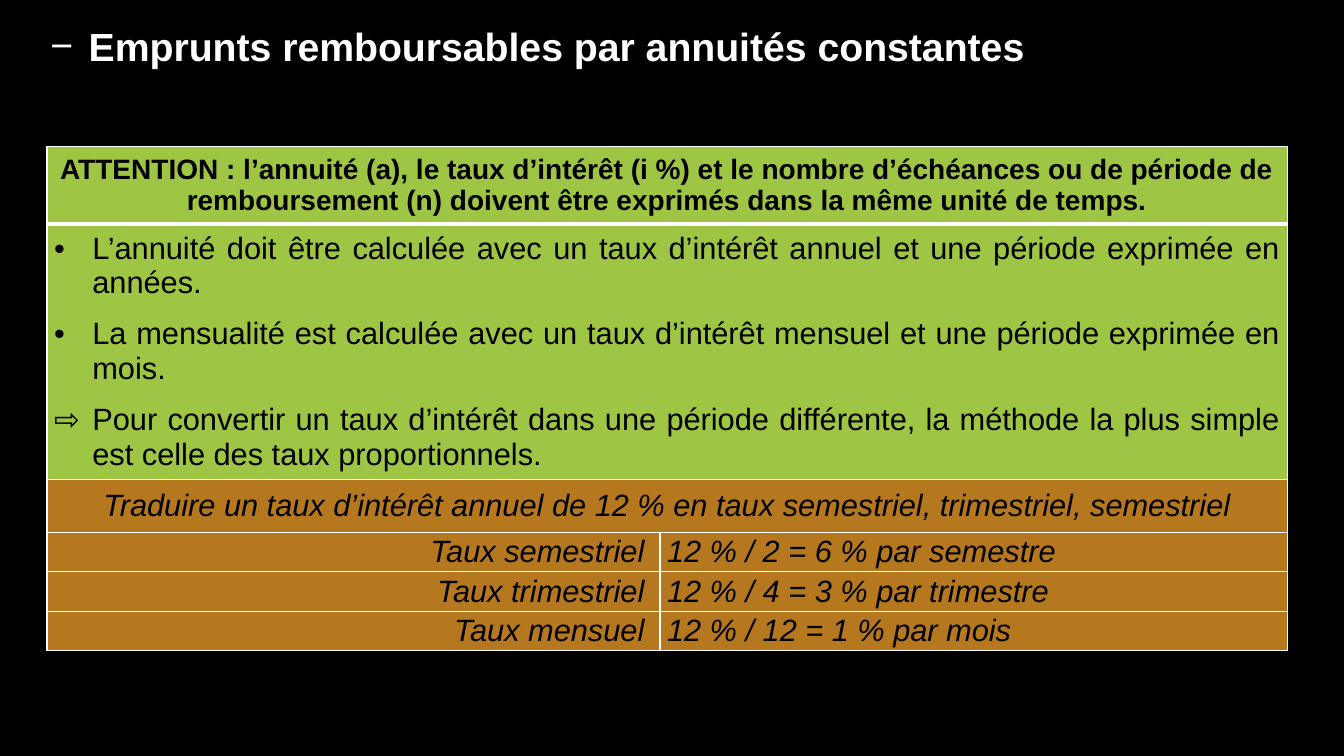
from dataclasses import dataclass

from lxml.etree import SubElement
from pptx import Presentation
from pptx.dml.color import RGBColor as Rgb
from pptx.enum.text import MSO_ANCHOR as Anchor, MSO_AUTO_SIZE as AutoSize, PP_ALIGN as Align
from pptx.oxml.ns import qn
from pptx.util import Inches, Pt


@dataclass(frozen=True)
class Theme:
    font: str = "Arial"
    back: str = "000000"
    light: str = "FFFFFF"
    dark: str = "000000"
    rule: str = "9EC544"
    example: str = "B5781F"
    title: int = 28
    warning: int = 20
    body: int = 22
    hang: float = 0.38
    thin: int = 1
    thick: int = 3


THEME = Theme()
WIDTH, HEIGHT = Inches(13.33), Inches(7.5)

TITLE = "Emprunts remboursables par annuités constantes"
WARNING = (
    "ATTENTION : l’annuité (a), le taux d’intérêt (i %) et le nombre d’échéances "
    "ou de période de remboursement (n) doivent être exprimés dans la même unité de temps."
)
RULES = [
    ("•", "L’annuité doit être calculée avec un taux d’intérêt annuel et une période exprimée en années."),
    ("•", "La mensualité est calculée avec un taux d’intérêt mensuel et une période exprimée en mois."),
    ("⇨", "Pour convertir un taux d’intérêt dans une période différente, la méthode la plus simple "
          "est celle des taux proportionnels."),
]
EXAMPLE = "Traduire un taux d’intérêt annuel de 12 % en taux semestriel, trimestriel, semestriel"
RATES = [
    ("Taux semestriel ", "12 % / 2 = 6 % par semestre"),
    ("Taux trimestriel ", "12 % / 4 = 3 % par trimestre"),
    ("Taux mensuel ", "12 % / 12 = 1 % par mois"),
]
COLUMN_SHARES = [45.61, 46.66]
ROW_SHARES = [10.27, 33.73, 7.07] + [5.2] * len(RATES)


def across(percent):
    return int(WIDTH * percent / 100)


def down(percent):
    return int(HEIGHT * percent / 100)


def write(para, text, size, color=THEME.dark, align=Align.LEFT, gap=(0, 0), bold=False, italic=False):
    para.text = text
    para.alignment = align
    para.space_before, para.space_after = map(Pt, gap)
    for span in para.runs:
        font = span.font
        font.name, font.size = THEME.font, Pt(size)
        font.bold, font.italic = bold, italic
        font.color.rgb = Rgb.from_string(color)


def add_bullet(para, mark):
    props = para._p.get_or_add_pPr()
    hang = Inches(THEME.hang)
    props.set("marL", str(hang))
    props.set("indent", str(-hang))
    SubElement(props, qn("a:buFont"), typeface=THEME.font)
    SubElement(props, qn("a:buChar"), char=mark)


def add_border(cell, side, points):
    line = SubElement(cell._tc.get_or_add_tcPr(), qn(f"a:ln{side}"), w=str(Pt(points)))
    fill = SubElement(line, qn("a:solidFill"))
    SubElement(fill, qn("a:srgbClr"), val=THEME.light)


def style_cell(cell, row):
    cell.vertical_anchor = Anchor.MIDDLE
    cell.margin_left = cell.margin_right = Inches(0.07)
    cell.margin_top = cell.margin_bottom = 0
    thick_sides = {0: "B", 1: "T"}
    for side in "LRTB":
        add_border(cell, side, THEME.thick if side == thick_sides.get(row) else THEME.thin)
    cell.fill.solid()
    cell.fill.fore_color.rgb = Rgb.from_string(THEME.rule if row < 2 else THEME.example)


def add_title(page):
    title = page.shapes.title
    title.left, title.top = across(3), down(2.93)
    title.width, title.height = across(91.07), down(7.6)
    frame = title.text_frame
    frame.word_wrap = True
    frame.auto_size = AutoSize.SHAPE_TO_FIT_TEXT
    frame.vertical_anchor = Anchor.TOP
    para = frame.paragraphs[0]
    write(para, TITLE, THEME.title, THEME.light, Align.JUSTIFY, (6, 0), bold=True)
    para.line_spacing = 0.9
    add_bullet(para, "−")


def add_grid(page):
    """Add the styled, still empty table, its first three rows merged."""
    table = page.shapes.add_table(
        len(ROW_SHARES), len(COLUMN_SHARES), across(3.5), down(19.33),
        across(sum(COLUMN_SHARES)), down(sum(ROW_SHARES)),
    ).table
    table.first_row = table.horz_banding = False
    for column, share in zip(table.columns, COLUMN_SHARES):
        column.width = across(share)
    for index, (row, share) in enumerate(zip(table.rows, ROW_SHARES)):
        row.height = down(share)
        for cell in row.cells:
            style_cell(cell, index)
    for index in range(3):
        table.cell(index, 0).merge(table.cell(index, 1))
    return table


def fill_rules(frame):
    for index, (mark, text) in enumerate(RULES):
        para = frame.add_paragraph() if index else frame.paragraphs[0]
        write(para, text, THEME.body, align=Align.JUSTIFY, gap=(6, 6))
        add_bullet(para, mark)


def fill_table(table):
    def first_para(row, column=0):
        return table.cell(row, column).text_frame.paragraphs[0]

    write(first_para(0), WARNING, THEME.warning, align=Align.CENTER, gap=(3, 3), bold=True)
    fill_rules(table.cell(1, 0).text_frame)
    write(first_para(2), EXAMPLE, THEME.body, align=Align.CENTER, gap=(3, 3), italic=True)
    for row, (label, result) in enumerate(RATES, start=3):
        write(first_para(row), label, THEME.body, align=Align.RIGHT, italic=True)
        write(first_para(row, 1), result, THEME.body, italic=True)


def main():
    deck = Presentation()
    deck.slide_width, deck.slide_height = WIDTH, HEIGHT
    page = deck.slides.add_slide(deck.slide_layouts[5])
    page.background.fill.solid()
    page.background.fill.fore_color.rgb = Rgb.from_string(THEME.back)
    add_title(page)
    fill_table(add_grid(page))
    deck.save("out.pptx")


if __name__ == "__main__":
    main()
